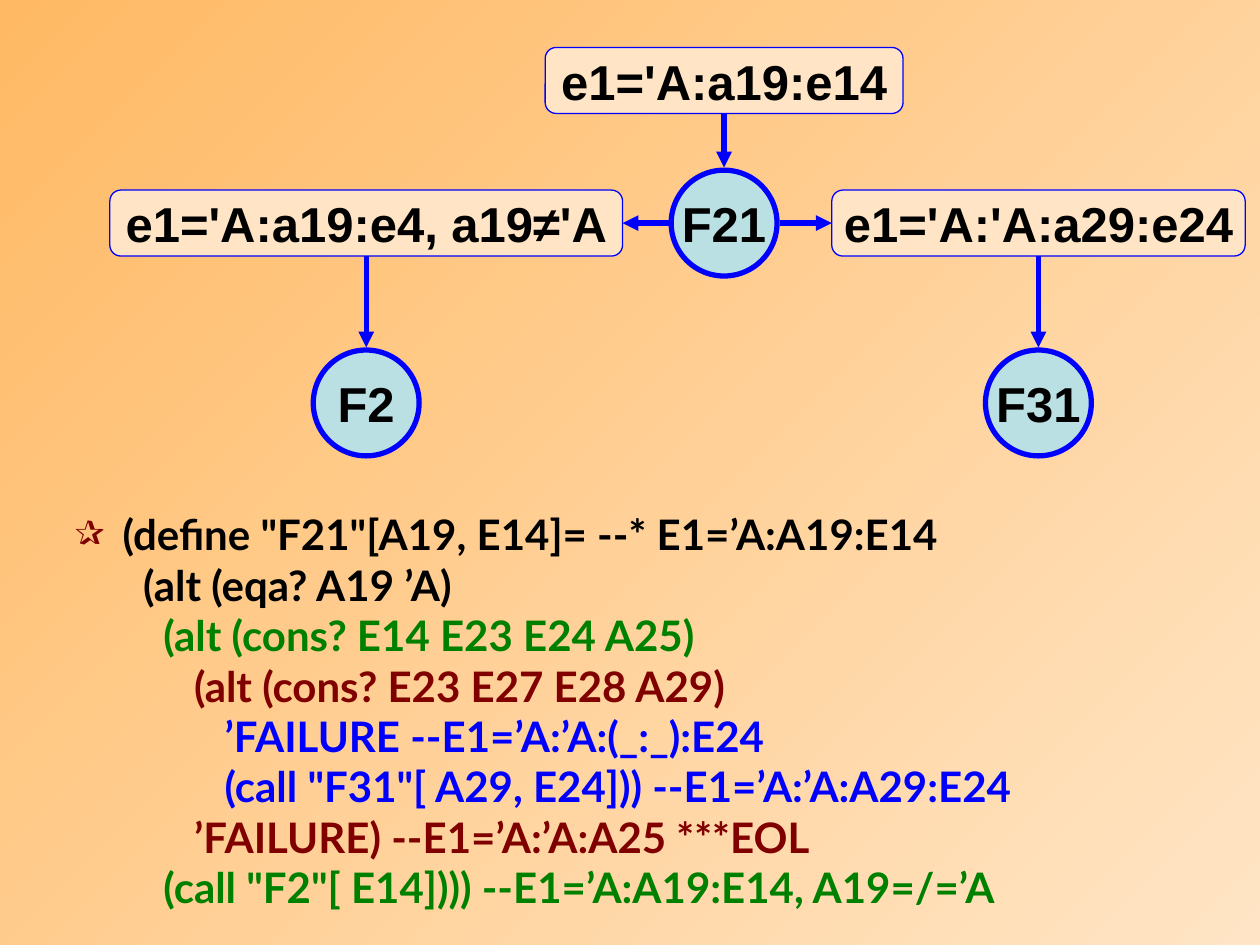
import pptx
import pptx.util
import pptx.dml.color
import pptx.enum.shapes
import pptx.enum.text
import pptx.oxml
import pptx.oxml.ns

Pt = pptx.util.Pt
RGBColor = pptx.dml.color.RGBColor
SHAPE = pptx.enum.shapes.MSO_SHAPE

BLACK = RGBColor(0x00, 0x00, 0x00)
BLUE = RGBColor(0x00, 0x00, 0xFF)
GREEN = RGBColor(0x00, 0x80, 0x00)
MAROON = RGBColor(0x80, 0x00, 0x00)
ORANGE = RGBColor(0xFF, 0xB9, 0x64)
CREAM = RGBColor(0xFF, 0xE5, 0xC5)
PALE_TEAL = RGBColor(0xBB, 0xE0, 0xE3)

presentation = pptx.Presentation()
presentation.slide_width = Pt(720)
presentation.slide_height = Pt(540)
slide = presentation.slides.add_slide(presentation.slide_layouts[6])

# Diagonal background gradient, top left to bottom right
background = slide.background.fill
background.gradient()
background.gradient_angle = 315
for stop, color in zip(background.gradient_stops, (ORANGE, CREAM)):
    stop.color.rgb = color


def add_node(kind, center_x, center_y, width, height, text, fill, line_width):
    shape = slide.shapes.add_shape(
        kind, Pt(center_x - width / 2), Pt(center_y - height / 2), Pt(width), Pt(height))
    shape.shadow.inherit = False
    shape.fill.solid()
    shape.fill.fore_color.rgb = fill
    shape.line.color.rgb = BLUE
    shape.line.width = Pt(line_width)
    frame = shape.text_frame
    frame.word_wrap = False
    frame.vertical_anchor = pptx.enum.text.MSO_ANCHOR.MIDDLE
    frame.text = text
    paragraph = frame.paragraphs[0]
    paragraph.alignment = pptx.enum.text.PP_ALIGN.CENTER
    font = paragraph.runs[0].font
    font.name = "Arial"
    font.size = Pt(28)
    font.bold = True
    font.color.rgb = BLACK


def add_arrow(start_x, start_y, end_x, end_y):
    arrow = slide.shapes.add_connector(
        pptx.enum.shapes.MSO_CONNECTOR.STRAIGHT,
        Pt(start_x), Pt(start_y), Pt(end_x), Pt(end_y))
    arrow.line.color.rgb = BLUE
    arrow.line.width = Pt(3)
    namespace = pptx.oxml.ns.nsdecls("a")
    arrow.line._get_or_add_ln().append(
        pptx.oxml.parse_xml(f'<a:tailEnd {namespace} type="triangle"/>'))
    arrow._element.spPr.append(pptx.oxml.parse_xml(f"<a:effectLst {namespace}/>"))


# Diagram grid: three columns, three rows
LEFT_X, MIDDLE_X, RIGHT_X = 209.3, 413.8, 593.4
TOP_Y, BRANCH_Y, BOTTOM_Y = 46, 127.5, 230.3
CIRCLE, BOX_HEIGHT = 60.5, 37.7
LEFT_WIDTH, RIGHT_WIDTH = 293, 236.2
reach = CIRCLE / 2 + 1.5
half_box = BOX_HEIGHT / 2

# State circles
for label, x, y in (("F2", LEFT_X, BOTTOM_Y), ("F21", MIDDLE_X, BRANCH_Y),
                    ("F31", RIGHT_X, BOTTOM_Y)):
    add_node(SHAPE.OVAL, x, y, CIRCLE, CIRCLE, label, PALE_TEAL, 3)

# Condition boxes
for label, x, y, width in (
        ("e1='A:a19:e14", MIDDLE_X, TOP_Y, 204.5),
        ("e1='A:a19:e4, a19≠'A", LEFT_X, BRANCH_Y, LEFT_WIDTH),
        ("e1='A:'A:a29:e24", RIGHT_X, BRANCH_Y, RIGHT_WIDTH)):
    add_node(SHAPE.ROUNDED_RECTANGLE, x, y, width, BOX_HEIGHT, label, CREAM, 0.75)

# Arrows down from each box, then sideways from the middle circle
for x, box_y, circle_y in ((MIDDLE_X, TOP_Y, BRANCH_Y), (LEFT_X, BRANCH_Y, BOTTOM_Y),
                           (RIGHT_X, BRANCH_Y, BOTTOM_Y)):
    add_arrow(x, box_y + half_box, x, circle_y - reach)
add_arrow(MIDDLE_X - reach, BRANCH_Y, LEFT_X + LEFT_WIDTH / 2, BRANCH_Y)
add_arrow(MIDDLE_X + reach, BRANCH_Y, RIGHT_X - RIGHT_WIDTH / 2, BRANCH_Y)

# Program listing: one bulleted paragraph with line breaks
CODE = (
    ("(define \"F21\"[A19, E14]= --* E1=’A:A19:E14", BLACK),
    ("  (alt (eqa? A19 ’A)", BLACK),
    ("    (alt (cons? E14 E23 E24 A25)", GREEN),
    ("       (alt (cons? E23 E27 E28 A29)", MAROON),
    ("          ’FAILURE --E1=’A:’A:(_:_):E24", BLUE),
    ("          (call \"F31\"[ A29, E24])) --E1=’A:’A:A29:E24", BLUE),
    ("       ’FAILURE) --E1=’A:’A:A25 ***EOL", MAROON),
    ("    (call \"F2\"[ E14]))) --E1=’A:A19:E14, A19=/=’A", GREEN),
)
listing = slide.shapes.add_textbox(Pt(36), Pt(287.3), Pt(669), Pt(252.7))
listing.text_frame.word_wrap = True
paragraph = listing.text_frame.paragraphs[0]
paragraph.text = "\v".join(line for line, color in CODE)
properties = paragraph._p.get_or_add_pPr()
properties.set("marL", str(Pt(27)))
properties.set("indent", str(-Pt(27)))
for bullet in (f'<a:buClr %s><a:srgbClr val="{MAROON}"/></a:buClr>',
               '<a:buChar %s char="✰"/>'):
    properties.append(pptx.oxml.parse_xml(bullet % pptx.oxml.ns.nsdecls("a")))
for run, (line, color) in zip(paragraph.runs, CODE):
    run.font.name = "Lato"
    run.font.size = Pt(24)
    run.font.bold = True
    run.font.color.rgb = color

presentation.save("out.pptx")
